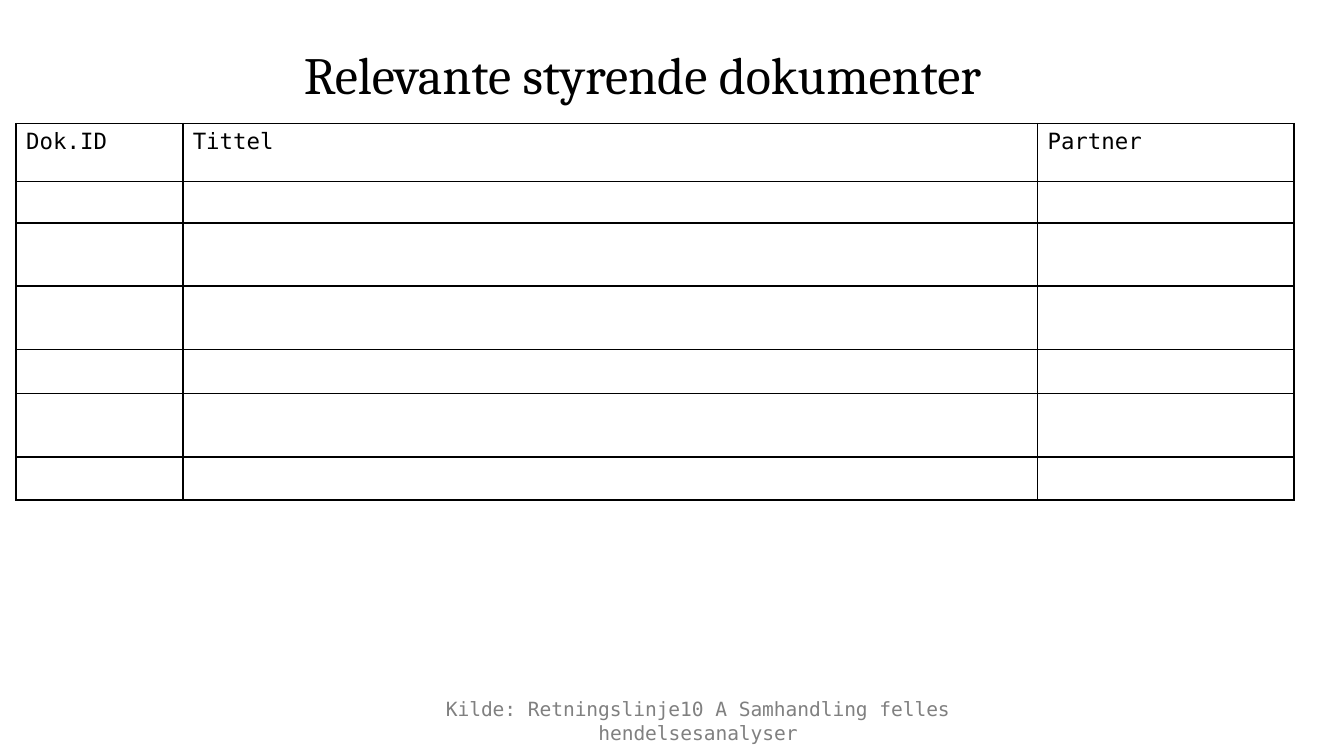
import pptx
import pptx.util
import pptx.dml.color
import pptx.enum.text
import pptx.oxml.ns
import lxml.etree

Inches = pptx.util.Inches
Pt = pptx.util.Pt
ALIGN = pptx.enum.text.PP_ALIGN
ANCHOR = pptx.enum.text.MSO_ANCHOR

THEME = {
    "title": {"font": "Cambria", "size": 28, "color": "000000"},
    "table": {"font": "DejaVu Sans Mono", "size": 12, "color": "000000"},
    "source": {"font": "DejaVu Sans Mono", "size": 10.5, "color": "808080"},
    "border": {"width": 1, "color": "000000"},
}

TITLE = "Relevante styrende dokumenter"
HEADS = ["Dok.ID", "Tittel", "Partner"]
SOURCE = "Kilde: Retningslinje10 A Samhandling felles hendelsesanalyser"

WIDTH = Inches(10)
HEIGHT = WIDTH * 9 // 16
TITLE_BOX = (0.28, 0.17, 9, 0.75)
SOURCE_BOX = (2.68, 5.14, 5.03, 0.3)
TABLE_AT = (0.12, 0.92)
COLS = [1.24, 6.36, 1.91]
ROWS = [0.43, 0.31, 0.47, 0.47, 0.33, 0.47, 0.32]


def style(para, look, align):
    para.alignment = align
    for run in para.runs:
        run.font.name = look["font"]
        run.font.size = Pt(look["size"])
        run.font.bold = False
        run.font.color.rgb = pptx.dml.color.RGBColor.from_string(look["color"])


def write(frame, text, look, align, anchor):
    frame.word_wrap = True
    frame.vertical_anchor = anchor
    frame.text = text
    style(frame.paragraphs[0], look, align)


def add_tag(parent, name, **attrs):
    return lxml.etree.SubElement(parent, pptx.oxml.ns.qn(name), **attrs)


def add_borders(cell, look):
    props = cell._tc.get_or_add_tcPr()
    for side in ("a:lnL", "a:lnR", "a:lnT", "a:lnB"):
        line = add_tag(props, side, w=str(Pt(look["width"])))
        fill = add_tag(line, "a:solidFill")
        add_tag(fill, "a:srgbClr", val=look["color"])


def fill_cell(cell, text):
    look = THEME["table"]
    cell.margin_left = cell.margin_right = Pt(5.4)
    cell.margin_top = cell.margin_bottom = Pt(2.7)
    add_borders(cell, THEME["border"])
    cell.fill.background()
    cell.text_frame.text = text
    para = cell.text_frame.paragraphs[0]
    style(para, look, ALIGN.LEFT)
    if not text:
        add_tag(para._p, "a:endParaRPr", sz=str(look["size"] * 100))


def add_grid(slide):
    left, top = map(Inches, TABLE_AT)
    shape = slide.shapes.add_table(
        len(ROWS), len(COLS), left, top, Inches(sum(COLS)), Inches(sum(ROWS))
    )
    table = shape.table
    table.first_row = False
    table.horz_banding = False
    for col, width in zip(table.columns, COLS):
        col.width = Inches(width)
    for i, (row, height) in enumerate(zip(table.rows, ROWS)):
        row.height = Inches(height)
        for cell, head in zip(row.cells, HEADS):
            fill_cell(cell, head if i == 0 else "")


def main():
    deck = pptx.Presentation()
    deck.slide_width = WIDTH
    deck.slide_height = HEIGHT
    slide = deck.slides.add_slide(deck.slide_layouts[5])

    title = slide.shapes.title
    title.left, title.top, title.width, title.height = map(Inches, TITLE_BOX)
    write(title.text_frame, TITLE, THEME["title"], ALIGN.CENTER, ANCHOR.MIDDLE)

    add_grid(slide)

    source = slide.shapes.add_textbox(*map(Inches, SOURCE_BOX))
    write(source.text_frame, SOURCE, THEME["source"], ALIGN.CENTER, ANCHOR.TOP)

    deck.save("out.pptx")


if __name__ == "__main__":
    main()
